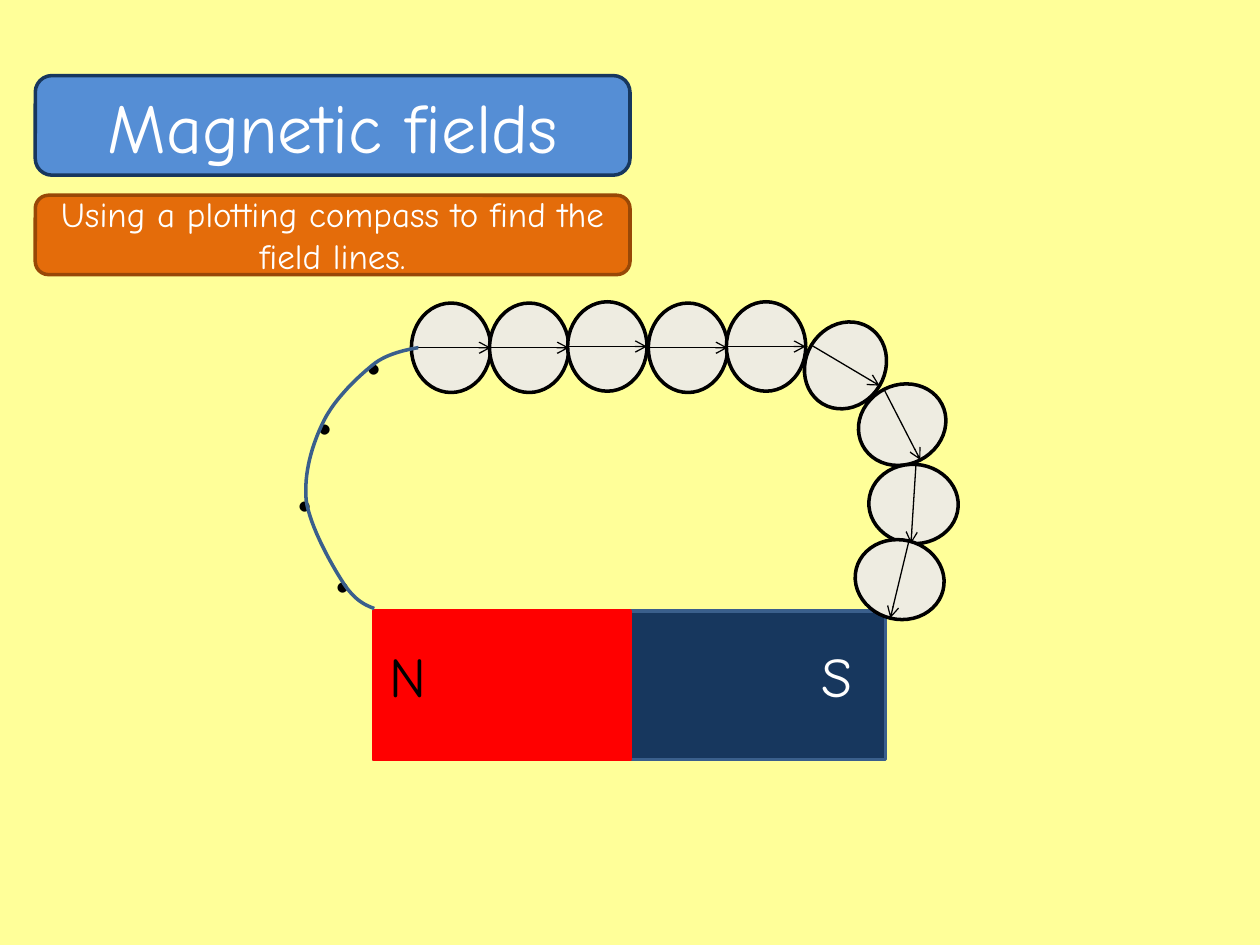
from math import cos, radians, sin

from lxml import etree
from pptx import Presentation
from pptx.dml.color import RGBColor
from pptx.enum.shapes import MSO_CONNECTOR, MSO_SHAPE
from pptx.enum.text import MSO_ANCHOR, PP_ALIGN
from pptx.oxml.ns import qn
from pptx.util import Inches, Pt

ROUNDED = MSO_SHAPE.ROUNDED_RECTANGLE
RECTANGLE = MSO_SHAPE.RECTANGLE
OVAL = MSO_SHAPE.OVAL
STRAIGHT = MSO_CONNECTOR.STRAIGHT
MIDDLE = MSO_ANCHOR.MIDDLE
TOP = MSO_ANCHOR.TOP
CENTER = PP_ALIGN.CENTER
LEFT = PP_ALIGN.LEFT

FONT = "Comic Neue"
WHITE = "FFFFFF"
BLACK = "000000"
NAVY = "17375E"
STEEL = "3A5F8C"
RED = "FF0000"

COMPASS_LENGTH = 0.71
COMPASS_WIDTH = 0.63
COMPASSES = [
    (3.58, 2.76, 0), (4.2, 2.76, 0), (4.82, 2.75, 0),
    (5.46, 2.76, 0), (6.08, 2.75, 0), (6.71, 2.9, 30.7),
    (7.16, 3.37, 62.8), (7.25, 4, 93.6), (7.14, 4.6, 103.5),
]
DOTS = [(0.11, 1.23), (-0.19, 0.58), (-0.03, -0.03), (0.36, -0.5)]
FIELD_CURVE = [
    (0.54, 2.07),
    (0.46, 2.04), (0.38, 2), (0.29, 1.86),
    (0.2, 1.72), (0.03, 1.42), (0, 1.21),
    (-0.02, 0.99), (0.05, 0.76), (0.14, 0.58),
    (0.23, 0.4), (0.42, 0.22), (0.55, 0.12),
    (0.67, 0.03), (0.89, 0), (0.89, 0),
]
CURVE_STEPS = 16


def color(value):
    return RGBColor.from_string(value)


def add_panel(shapes, kind, box, fill, line):
    shape = shapes.add_shape(kind, *map(Inches, box))
    shape.shadow.inherit = False
    shape.fill.solid()
    shape.fill.fore_color.rgb = color(fill)
    shape.line.color.rgb = color(line)
    shape.line.width = Pt(2)
    return shape


def write_text(shape, text, size, font=FONT, fill=WHITE, align=LEFT, anchor=TOP):
    frame = shape.text_frame
    frame.word_wrap = True
    frame.vertical_anchor = anchor
    paragraph = frame.paragraphs[0]
    paragraph.alignment = align
    run = paragraph.add_run()
    run.text = text
    run.font.size = Pt(size)
    run.font.name = font
    run.font.color.rgb = color(fill)


def add_label(shapes, box, text, size, **style):
    write_text(shapes.add_textbox(*map(Inches, box)), text, size, **style)


def add_heading(shapes, box, text, size, fill, line):
    panel = add_panel(shapes, ROUNDED, box, fill, line)
    write_text(panel, text, size, align=CENTER, anchor=MIDDLE)


def add_magnet(shapes, box):
    left, top, width, height = box
    magnet = shapes.add_group_shape().shapes
    add_panel(magnet, RECTANGLE, box, NAVY, STEEL)
    add_panel(magnet, RECTANGLE, (left, top, width / 2, height), RED, RED)
    label_top = top + 0.19
    add_label(magnet, (left + 0.02, label_top, 0.54, 0.8), "N", 32, fill=BLACK)
    add_label(magnet, (left + width - 0.61, label_top, 0.54, 0.8), "S", 32)


def add_arrow(shapes, start, end):
    arrow = shapes.add_connector(STRAIGHT, *map(Inches, (*start, *end)))
    arrow.line.color.rgb = color(BLACK)
    arrow.line.width = Pt(0.75)
    etree.SubElement(arrow.line._get_or_add_ln(), qn("a:tailEnd"), type="arrow")
    etree.SubElement(arrow._element.spPr, qn("a:effectLst"))


def add_compass(shapes, center_x, center_y, angle):
    compass = shapes.add_group_shape().shapes
    box = (center_x - COMPASS_LENGTH / 2, center_y - COMPASS_WIDTH / 2,
           COMPASS_LENGTH, COMPASS_WIDTH)
    case = add_panel(compass, OVAL, box, "EEECE1", BLACK)
    case.rotation = 90 + angle
    reach_x = COMPASS_WIDTH / 2 * cos(radians(angle))
    reach_y = COMPASS_WIDTH / 2 * sin(radians(angle))
    add_arrow(compass, (center_x - reach_x, center_y - reach_y),
              (center_x + reach_x, center_y + reach_y))


def bezier_point(controls, t):
    weights = ((1 - t) ** 3, 3 * t * (1 - t) ** 2, 3 * t ** 2 * (1 - t), t ** 3)
    return tuple(sum(weight * point[axis] for weight, point in zip(weights, controls))
                 for axis in (0, 1))


def add_field_line(shapes, left, top):
    for x, y in DOTS:
        add_label(shapes, (left + x, top + y, 0.79, 0.91), ".", 48,
                  font="Calibri", fill=BLACK)
    points = [
        bezier_point(FIELD_CURVE[first:first + 4], step / CURVE_STEPS)
        for first in range(0, len(FIELD_CURVE) - 1, 3)
        for step in range(1, CURVE_STEPS + 1)
    ]
    start, *rest = [(Inches(left + x), Inches(top + y))
                    for x, y in [FIELD_CURVE[0], *points]]
    builder = shapes.build_freeform(*start)
    builder.add_line_segments(rest, close=False)
    curve = builder.convert_to_shape()
    curve.shadow.inherit = False
    curve.fill.background()
    curve.line.color.rgb = color(STEEL)
    curve.line.width = Pt(2)


def main():
    presentation = Presentation()
    presentation.slide_width = Inches(10)
    presentation.slide_height = Inches(7.5)
    slide = presentation.slides.add_slide(presentation.slide_layouts[6])
    slide.background.fill.solid()
    slide.background.fill.fore_color.rgb = color("FFFF99")
    shapes = slide.shapes
    add_heading(shapes, (0.28, 0.6, 4.72, 0.79), "Magnetic fields", 40,
                "558ED5", NAVY)
    add_heading(shapes, (0.28, 1.55, 4.72, 0.63),
                "Using a plotting compass to find the field lines.", 20,
                "E46C0A", "984807")
    add_magnet(shapes, (2.97, 4.85, 4.06, 1.18))
    for compass in COMPASSES:
        add_compass(shapes, *compass)
    add_field_line(shapes, 2.43, 2.76)
    presentation.save("out.pptx")


if __name__ == "__main__":
    main()
